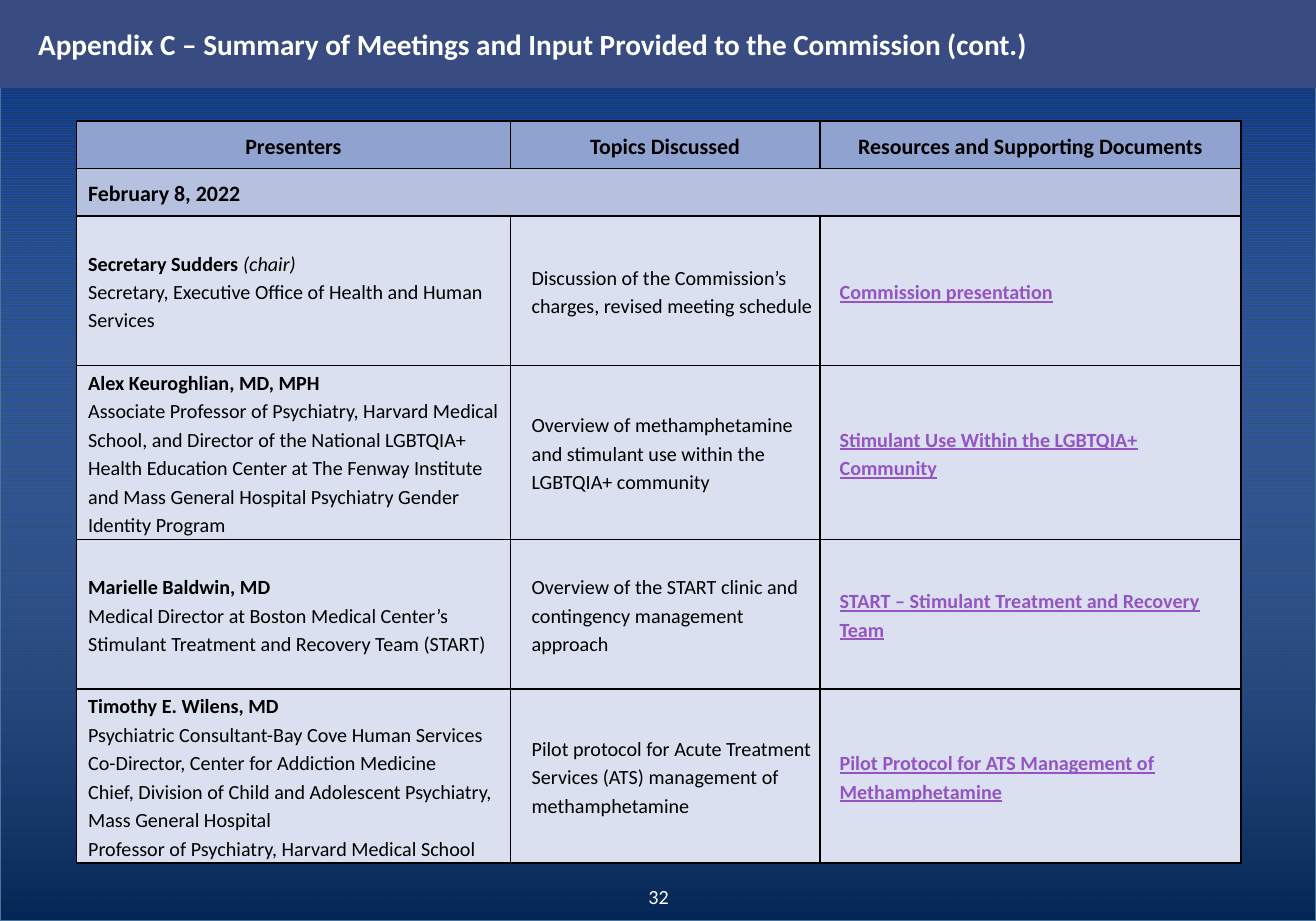
import pptx
import pptx.util
import pptx.dml.color
import pptx.enum.dml
import pptx.enum.shapes
import pptx.enum.text
import pptx.oxml
import pptx.oxml.ns

PX = 9144
COLORS = {
    "pattern": "003399", "navy": "072C62", "glow_bottom": "062756",
    "glow_top": "B6D1FA", "edge": "49749B", "bar": "384C81",
    "header": "90A2CF", "date": "B5C1DF", "body": "DAE0EF",
    "link": "9454C3", "black": "000000", "white": "FFFFFF",
}
HEADERS = ["Presenters", "Topics Discussed", "Resources and Supporting Documents"]
MEETING_DATE = "February 8, 2022"
SESSIONS = [
    ("Secretary Sudders ", "(chair)",
     ["Secretary, Executive Office of Health and Human Services"],
     "Discussion of the Commission’s charges, revised meeting schedule",
     "Commission presentation"),
    ("Alex Keuroghlian, MD, MPH", "",
     ["Associate Professor of Psychiatry, Harvard Medical School, and Director of "
      "the National LGBTQIA+ Health Education Center at The Fenway Institute and "
      "Mass General Hospital Psychiatry Gender Identity Program"],
     "Overview of methamphetamine and stimulant use within the LGBTQIA+ community",
     "Stimulant Use Within the LGBTQIA+ Community"),
    ("Marielle Baldwin, MD", "",
     ["Medical Director at Boston Medical Center’s Stimulant Treatment and "
      "Recovery Team (START)"],
     "Overview of the START clinic and contingency management approach",
     "START – Stimulant Treatment and Recovery Team"),
    ("Timothy E. Wilens, MD", "",
     ["Psychiatric Consultant-Bay Cove Human Services",
      "Co-Director, Center for Addiction Medicine",
      "Chief, Division of Child and Adolescent Psychiatry,",
      "Mass General Hospital",
      "Professor of Psychiatry, Harvard Medical School"],
     "Pilot protocol for Acute Treatment Services (ATS) management of methamphetamine",
     "Pilot Protocol for ATS Management of Methamphetamine"),
]


def px(length):
    """Turn px into EMU."""
    return pptx.util.Emu(length * PX)


def rgb(name):
    """Return the named colour."""
    return pptx.dml.color.RGBColor.from_string(COLORS[name])


def format_font(font, size, color, bold=False):
    """Set the typeface, size, colour and weight of a font."""
    font.name = "Calibri"
    font.size = pptx.util.Pt(size)
    font.color.rgb = rgb(color)
    font.bold = bold


def add_background(slide, left, top, width, height):
    """Stripe the background and lay a fading gradient over it."""
    fill = slide.background.fill
    fill.patterned()
    fill.pattern = pptx.enum.dml.MSO_PATTERN.LIGHT_HORIZONTAL
    fill.fore_color.rgb = rgb("pattern")
    fill.back_color.rgb = rgb("navy")

    glow = slide.shapes.add_shape(
        pptx.enum.shapes.MSO_SHAPE.RECTANGLE,
        px(left), px(top), px(width), px(height))
    glow.shadow.inherit = False
    glow.fill.gradient()
    glow.fill.gradient_angle = 90
    stops = glow.fill.gradient_stops
    for stop, position, color in zip(stops, (0, 1), ("glow_bottom", "glow_top")):
        stop.position = position
        stop.color.rgb = rgb(color)
    top_color = glow._element.spPr.findall(".//" + pptx.oxml.ns.qn("a:srgbClr"))[1]
    top_color.append(pptx.oxml.parse_xml(
        f'<a:alpha {pptx.oxml.ns.nsdecls("a")} val="0"/>'))
    glow.line.color.rgb = rgb("edge")
    glow.line.width = pptx.util.Pt(1.5)
    slide.shapes._spTree.insert(2, glow._element)


def add_title(slide, left, top, width, height):
    """Format the title placeholder as a full-width bar."""
    title = slide.shapes.title
    title.left, title.top, title.width, title.height = map(
        px, (left, top, width, height))
    title.fill.solid()
    title.fill.fore_color.rgb = rgb("bar")
    frame = title.text_frame
    frame.text = ("Appendix C – Summary of Meetings and Input Provided "
                  "to the Commission (cont.)")
    frame.margin_left = px(29)
    frame.vertical_anchor = pptx.enum.text.MSO_ANCHOR.MIDDLE
    paragraph = frame.paragraphs[0]
    paragraph.alignment = pptx.enum.text.PP_ALIGN.LEFT
    format_font(paragraph.font, 16, "white", True)


def format_cell(cell, fill, margin_left):
    """Set the borders, fill and margins of a cell."""
    properties = cell._tc.get_or_add_tcPr()
    for side in "LRTB":
        properties.append(pptx.oxml.parse_xml(
            f'<a:ln{side} {pptx.oxml.ns.nsdecls("a")} w="12700"><a:solidFill>'
            f'<a:srgbClr val="{COLORS["black"]}"/></a:solidFill></a:ln{side}>'))
    cell.fill.solid()
    cell.fill.fore_color.rgb = rgb(fill)
    cell.vertical_anchor = pptx.enum.text.MSO_ANCHOR.MIDDLE
    cell.margin_left, cell.margin_right = px(margin_left), px(3)
    cell.margin_top = cell.margin_bottom = px(1)


def write_paragraph(paragraph, text, size=11, color="black", bold=False):
    """Write a table paragraph in one font."""
    paragraph.text = text
    paragraph.line_spacing = 1.15
    format_font(paragraph.font, size, color, bold)


def write_presenter(frame, name, role, positions):
    """Write a bold name, an optional italic role and the positions held."""
    heading = frame.paragraphs[0]
    write_paragraph(heading, name, bold=True)
    if role:
        run = heading.add_run()
        run.text = role
        run.font.bold = False
        run.font.italic = True
    for position in positions:
        write_paragraph(frame.add_paragraph(), position)


def add_meetings_table(slide, left, top, width, height):
    """Add the table of presenters, topics and resources."""
    table = slide.shapes.add_table(
        len(SESSIONS) + 2, len(HEADERS),
        px(left), px(top), px(width), px(height)).table
    for column, column_width in zip(table.columns, (330, 235, 320)):
        column.width = px(column_width)
    for index, row in enumerate(table.rows):
        row.height = px(36 if index < 2 else 114)

    for column, header in enumerate(HEADERS):
        cell = table.cell(0, column)
        format_cell(cell, "header", 3)
        paragraph = cell.text_frame.paragraphs[0]
        write_paragraph(paragraph, header, 12, bold=True)
        paragraph.alignment = pptx.enum.text.PP_ALIGN.CENTER
        format_cell(table.cell(1, column), "date", 9)

    date_cell = table.cell(1, 0)
    date_cell.merge(table.cell(1, len(HEADERS) - 1))
    write_paragraph(date_cell.text_frame.paragraphs[0], MEETING_DATE, 12, bold=True)

    for row, (name, role, positions, topic, resource) in enumerate(SESSIONS, 2):
        cells = [table.cell(row, column) for column in range(len(HEADERS))]
        for cell, margin_left in zip(cells, (9, 16, 15)):
            format_cell(cell, "body", margin_left)
        write_presenter(cells[0].text_frame, name, role, positions)
        write_paragraph(cells[1].text_frame.paragraphs[0], topic)
        link = cells[2].text_frame.paragraphs[0]
        write_paragraph(link, resource, color="link", bold=True)
        link.font.underline = True


def add_page_number(slide, left, top, width, height):
    """Add the centred page number."""
    frame = slide.shapes.add_textbox(
        px(left), px(top), px(width), px(height)).text_frame
    frame.word_wrap = True
    paragraph = frame.paragraphs[0]
    paragraph.text = "32"
    paragraph.alignment = pptx.enum.text.PP_ALIGN.CENTER
    format_font(paragraph.font, 11, "white")


def main():
    """Build and save the presentation."""
    presentation = pptx.Presentation()
    presentation.slide_width, presentation.slide_height = px(1000), px(700)
    slide = presentation.slides.add_slide(presentation.slide_layouts[5])
    add_background(slide, 0, 0, 1000, 700)
    add_title(slide, 0, 0, 1000, 67)
    add_meetings_table(slide, 58, 92, 885, 528)
    add_page_number(slide, 417, 667, 167, 33)
    presentation.save("out.pptx")


if __name__ == "__main__":
    main()
